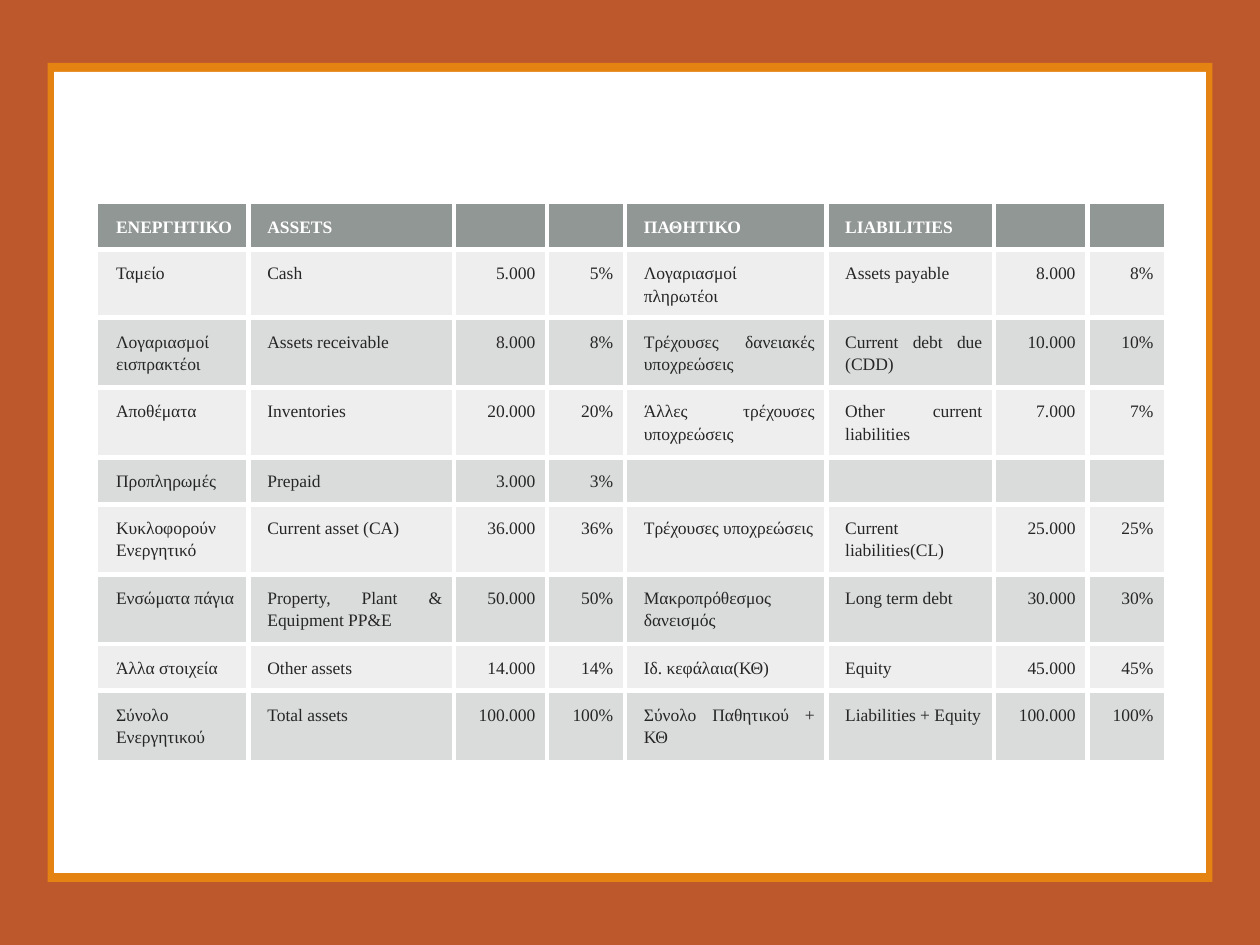
from lxml.etree import SubElement
from pptx import Presentation
from pptx.dml.color import RGBColor
from pptx.enum.shapes import MSO_SHAPE
from pptx.enum.text import PP_ALIGN
from pptx.oxml.ns import qn
from pptx.util import Cm, Pt

RUST = RGBColor(0xBD, 0x58, 0x2C)
ORANGE = RGBColor(0xE4, 0x83, 0x12)
WHITE = RGBColor(0xFF, 0xFF, 0xFF)
INK = RGBColor(0x26, 0x26, 0x26)
HEADER_GREY = RGBColor(0x63, 0x6B, 0x68)
BAND_GREY = RGBColor(0x87, 0x8E, 0x8B)

FONT = "Times New Roman"
SLIDE_WIDTH, SLIDE_HEIGHT = 25.4, 19.05
COLUMN_WIDTHS = [3.05, 4.14, 1.88, 1.57, 4.06, 3.38, 1.88, 1.57]
ROW_HEIGHTS = [0.94, 0.94, 1.41, 1.41, 0.94, 1.41, 1.41, 0.94, 1.41]
NUMBER_COLUMNS = {2, 3, 6, 7}

BALANCE_SHEET = [
    ["ΕΝΕΡΓΗΤΙΚΟ", "ASSETS", "", "", "ΠΑΘΗΤΙΚΟ", "LIABILITIES", "", ""],
    ["Ταμείο", "Cash", "5.000", "5%",
     "Λογαριασμοί πληρωτέοι", "Assets payable", "8.000", "8%"],
    ["Λογαριασμοί εισπρακτέοι", "Assets receivable", "8.000", "8%",
     "Τρέχουσες δανειακές υποχρεώσεις", "Current debt due (CDD)", "10.000", "10%"],
    ["Αποθέματα", "Inventories", "20.000", "20%",
     "Άλλες τρέχουσες υποχρεώσεις", "Other current liabilities", "7.000", "7%"],
    ["Προπληρωμές", "Prepaid", "3.000", "3%", "", "", "", ""],
    ["Κυκλοφορούν Ενεργητικό", "Current asset (CA)", "36.000", "36%",
     "Τρέχουσες υποχρεώσεις", "Current liabilities(CL)", "25.000", "25%"],
    ["Ενσώματα πάγια", "Property, Plant & Equipment PP&E", "50.000", "50%",
     "Μακροπρόθεσμος δανεισμός", "Long term debt", "30.000", "30%"],
    ["Άλλα στοιχεία", "Other assets", "14.000", "14%",
     "Ιδ. κεφάλαια(ΚΘ)", "Equity", "45.000", "45%"],
    ["Σύνολο Ενεργητικού", "Total assets", "100.000", "100%",
     "Σύνολο Παθητικού + ΚΘ", "Liabilities + Equity", "100.000", "100%"],
]


def add_frame(slide, left, top, width, height):
    """Stack the rust backdrop, the orange border and the white panel."""
    layers = [(0, 0, RUST), (0.96, 1.27, ORANGE), (1.09, 1.45, WHITE)]
    for inset_x, inset_y, color in layers:
        shape = slide.shapes.add_shape(
            MSO_SHAPE.RECTANGLE, Cm(left + inset_x), Cm(top + inset_y),
            Cm(width - 2 * inset_x), Cm(height - 2 * inset_y))
        shape.shadow.inherit = False
        shape.fill.solid()
        shape.fill.fore_color.rgb = color
        shape.line.fill.background()


def add_border(cell, side):
    line = SubElement(cell._tc.get_or_add_tcPr(), qn(f"a:ln{side}"), w=str(Pt(3)))
    fill = SubElement(line, qn("a:solidFill"))
    SubElement(fill, qn("a:srgbClr"), val=str(WHITE))


def fill_cell(cell, color, opacity):
    cell.fill.solid()
    cell.fill.fore_color.rgb = color
    color_element = cell._tc.tcPr.find(qn("a:solidFill"))[0]
    SubElement(color_element, qn("a:alpha"), val=str(opacity * 1000))


def write_cell(cell, text, alignment, is_header):
    cell.margin_left = Cm(0.38)
    cell.margin_right = cell.margin_top = cell.margin_bottom = Cm(0.24)
    paragraph = cell.text_frame.paragraphs[0]
    paragraph.text = text
    paragraph.alignment = alignment
    paragraph.line_spacing = 1.15
    paragraph.space_after = Pt(10)
    paragraph.font.name = FONT
    paragraph.font.size = Pt(10)
    paragraph.font.bold = is_header
    paragraph.font.color.rgb = WHITE if is_header else INK


def add_balance_sheet(slide, left, top):
    last_row, last_column = len(ROW_HEIGHTS) - 1, len(COLUMN_WIDTHS) - 1
    table = slide.shapes.add_table(
        last_row + 1, last_column + 1, Cm(left), Cm(top),
        Cm(sum(COLUMN_WIDTHS)), Cm(sum(ROW_HEIGHTS))).table
    table.first_row = table.horz_banding = False
    for column, width in zip(table.columns, COLUMN_WIDTHS):
        column.width = Cm(width)
    for row, height in zip(table.rows, ROW_HEIGHTS):
        row.height = Cm(height)

    for row_index, texts in enumerate(BALANCE_SHEET):
        is_header = row_index == 0
        color = HEADER_GREY if is_header else BAND_GREY
        opacity = 70 if is_header else 15 if row_index % 2 else 30
        for column_index, text in enumerate(texts):
            cell = table.cell(row_index, column_index)
            is_number = column_index in NUMBER_COLUMNS
            alignment = PP_ALIGN.RIGHT if is_number else PP_ALIGN.JUSTIFY
            write_cell(cell, text, alignment, is_header)
            inner_sides = {"L": column_index > 0, "R": column_index < last_column,
                           "T": row_index > 0, "B": row_index < last_row}
            for side, is_inner in inner_sides.items():
                if is_inner:
                    add_border(cell, side)
            fill_cell(cell, color, opacity)


def main():
    presentation = Presentation()
    presentation.slide_width = Cm(SLIDE_WIDTH)
    presentation.slide_height = Cm(SLIDE_HEIGHT)
    slide = presentation.slides.add_slide(presentation.slide_layouts[6])
    add_frame(slide, 0, 0, SLIDE_WIDTH, SLIDE_HEIGHT)
    add_balance_sheet(slide, 1.96, 4.09)
    presentation.save("out.pptx")


if __name__ == "__main__":
    main()
